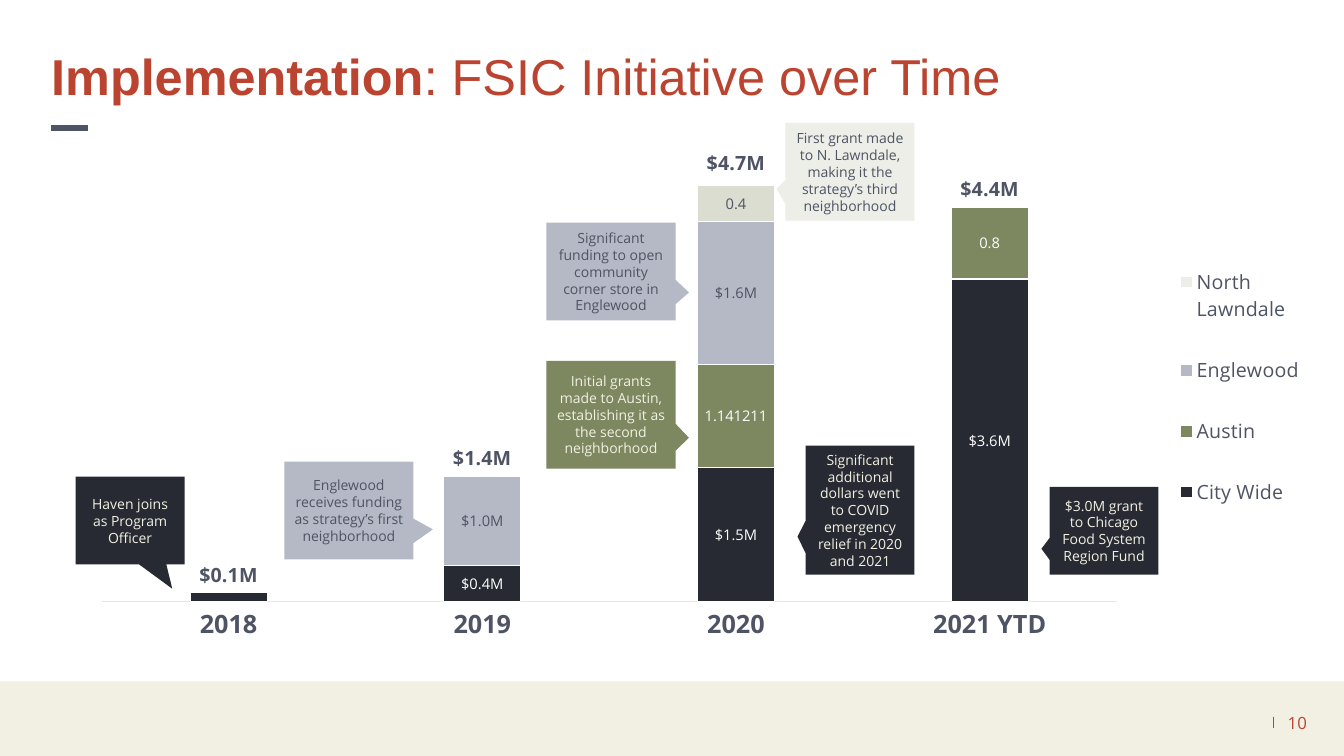
from dataclasses import dataclass
from typing import Optional

from lxml import etree
from pptx import Presentation
from pptx import util as u
from pptx.chart.data import CategoryChartData
from pptx.dml.color import RGBColor
from pptx.enum import chart as ch
from pptx.enum import shapes, text
from pptx.oxml import parse_xml
from pptx.oxml.ns import nsdecls, qn

RED, SLATE, INK, CREAM = "BA4430", "4E5464", "272A32", "F1F0E2"
OLIVE, LAVENDER, PALE, WHITE = "7D8760", "B4B9C5", "ECEEE7", "FFFFFF"
HEADING, BODY = "Arial", "Open Sans"
MONEY = '"$"#,##0.0"M"'


@dataclass
class Callout:
    text: str
    left: float
    top: float
    width: float
    height: float
    tip: tuple[float, float]
    fill: str
    color: str


@dataclass
class Fund:
    name: str
    values: tuple[Optional[float], ...]
    fill: str
    label_color: str
    label_format: str = "General"


CALLOUTS = [
    Callout("Haven joins as Program Officer",
            0.75, 4.73, 1.08, 0.87, (0.388, 0.777), INK, CREAM),
    Callout("Englewood receives funding as strategy’s first neighborhood",
            2.82, 4.58, 1.28, 0.97, (0.651, 0.193), LAVENDER, SLATE),
    Callout("Significant funding to open community corner store in Englewood",
            5.42, 2.21, 1.28, 0.97, (0.604, 0.214), LAVENDER, SLATE),
    Callout("Initial grants made to Austin, establishing it as the second neighborhood",
            5.42, 3.58, 1.28, 1.07, (0.604, 0.214), OLIVE, CREAM),
    Callout("First grant made to N. Lawndale, making it the strategy’s third neighborhood",
            7.79, 1.22, 1.28, 0.97, (-0.569, 0.173), PALE, SLATE),
    Callout("$3.0M grant to Chicago Food System Region Fund",
            10.41, 4.83, 1.08, 0.87, (-0.575, 0.206), INK, CREAM),
    Callout("Significant additional dollars went to COVID emergency relief in 2020 and 2021",
            7.99, 4.42, 1.08, 1.28, (-0.575, 0.206), INK, CREAM),
]
YEARS = ["2018", "2019", "2020", "2021 YTD"]
FUNDS = [
    Fund("City Wide", (0.1, 0.4, 1.5, 3.6), INK, WHITE, MONEY),
    Fund("Austin", (None, None, 1.141211, 0.8), OLIVE, WHITE),
    Fund("Englewood", (None, 1, 1.6, None), LAVENDER, SLATE, MONEY),
    Fund("North Lawndale", (None, None, 0.4, None), PALE, SLATE),
]
TOTALS = (0.1, 1.4, 4.7, 4.4)


def rgb(color: str) -> RGBColor:
    return RGBColor.from_string(color)


def set_font(font, size: float, color: str, name: str = BODY, bold: bool = False) -> None:
    font.size, font.name, font.bold = u.Pt(size), name, bold
    font.color.rgb = rgb(color)


def add_run(p, words: str, size: float, color: str, name: str = BODY, bold: bool = False) -> None:
    r = p.add_run()
    r.text = words
    set_font(r.font, size, color, name, bold)


def add_box(s, kind, left: float, top: float, width: float, height: float, fill: str):
    sp = s.shapes.add_shape(kind, *map(u.Inches, (left, top, width, height)))
    sp.shadow.inherit = False
    sp.fill.solid()
    sp.fill.fore_color.rgb = rgb(fill)
    sp.line.fill.background()
    return sp


def add_text(s, left: float, top: float, width: float, height: float):
    tf = s.shapes.add_textbox(*map(u.Inches, (left, top, width, height))).text_frame
    tf.word_wrap = True
    return tf


def add_line(s, x1: float, y1: float, x2: float, y2: float, color: str, width: float) -> None:
    line = s.shapes.add_connector(shapes.MSO_CONNECTOR.STRAIGHT, *map(u.Inches, (x1, y1, x2, y2)))
    line.line.color.rgb = rgb(color)
    line.line.width = u.Pt(width)
    etree.SubElement(line._element.spPr, qn("a:effectLst"))


def add_callout(s, c: Callout) -> None:
    sp = add_box(s, shapes.MSO_SHAPE.RECTANGULAR_CALLOUT, c.left, c.top, c.width, c.height, c.fill)
    sp.adjustments[0], sp.adjustments[1] = c.tip
    tf = sp.text_frame
    tf.word_wrap = True
    tf.vertical_anchor = text.MSO_ANCHOR.MIDDLE
    p = tf.paragraphs[0]
    p.alignment = text.PP_ALIGN.CENTER
    add_run(p, c.text, 10, c.color)


def set_layout(parent, index: int, x: float, y: float, w: float, h: float, target: str = "") -> None:
    """Place a chart part by hand, in fractions of the chart."""
    for old in parent.findall(qn("c:layout")):
        parent.remove(old)
    parent.insert(index, parse_xml(
        f'<c:layout {nsdecls("c")}><c:manualLayout>{target}'
        '<c:xMode val="edge"/><c:yMode val="edge"/>'
        f'<c:x val="{x}"/><c:y val="{y}"/><c:w val="{w}"/><c:h val="{h}"/>'
        '</c:manualLayout></c:layout>'))


def move_totals_to_line(area) -> None:
    """Turn the last column series into a line on hidden second axes."""
    bars = area.find(qn("c:barChart"))
    ser = bars.findall(qn("c:ser"))[-1]
    for flag in ser.findall(qn("c:invertIfNegative")):
        ser.remove(flag)
    line = parse_xml(
        f'<c:lineChart {nsdecls("c")}><c:grouping val="standard"/><c:varyColors val="0"/>'
        '<c:marker val="1"/><c:axId val="5001"/><c:axId val="5002"/></c:lineChart>')
    line.insert(2, ser)
    bars.addnext(line)
    last = area.find(qn("c:valAx"))
    for tag, own, other, side, crosses, scale in (
            ("catAx", 5001, 5002, "b", "autoZero", ""),
            ("valAx", 5002, 5001, "r", "max", '<c:max val="5"/><c:min val="0"/>')):
        axis = parse_xml(
            f'<c:{tag} {nsdecls("c")}><c:axId val="{own}"/>'
            f'<c:scaling><c:orientation val="minMax"/>{scale}</c:scaling><c:delete val="1"/>'
            f'<c:axPos val="{side}"/><c:crossAx val="{other}"/>'
            f'<c:crosses val="{crosses}"/></c:{tag}>')
        last.addnext(axis)
        last = axis


def style_labels(ser, size: float, color: str, number_format: str, bold: bool = False):
    labels = ser.data_labels
    labels.show_value = True
    labels.number_format, labels.number_format_is_linked = number_format, False
    set_font(labels.font, size, color, bold=bold)
    return labels


def paint_column(fmt, fill: str) -> None:
    fmt.fill.solid()
    fmt.fill.fore_color.rgb = rgb(fill)
    fmt.line.color.rgb = rgb(WHITE)
    fmt.line.width = u.Pt(0.75)


def add_funding_chart(s) -> None:
    data = CategoryChartData()
    data.categories = YEARS
    for fund in FUNDS:
        data.add_series(fund.name, fund.values)
    data.add_series("Series 5", TOTALS)
    chart = s.shapes.add_chart(ch.XL_CHART_TYPE.COLUMN_STACKED,
                               *map(u.Inches, (0.75, 1.34, 12.35, 5.21)), data).chart
    chart.has_title = False
    set_font(chart.font, 12, SLATE)

    years, money = chart.category_axis, chart.value_axis
    years.major_tick_mark = years.minor_tick_mark = ch.XL_TICK_MARK.NONE
    years.format.line.color.rgb = rgb("E3E5E9")
    years.format.line.width = u.Pt(0.75)
    set_font(years.tick_labels.font, 18, SLATE, bold=True)
    money.minimum_scale, money.maximum_scale = 0, 5
    money.has_major_gridlines = money.visible = False
    money.tick_labels.number_format = MONEY
    money.tick_labels.number_format_is_linked = False

    area = chart._chartSpace.chart.plotArea
    move_totals_to_line(area)
    set_layout(area, 0, 0.021, 0.035, 0.815, 0.854, '<c:layoutTarget val="inner"/>')

    columns, line = chart.plots
    columns.gap_width, columns.overlap = 230, 100
    columns.vary_by_categories = False
    for fund, ser in zip(FUNDS, columns.series):
        paint_column(ser.format, fund.fill)
        style_labels(ser, 10.5, fund.label_color, fund.label_format)
    paint_column(columns.series[3].points[2].format, "DADDD0")
    columns.series[0].data_labels._element.insert(0, parse_xml(
        f'<c:dLbl {nsdecls("c")}><c:idx val="0"/><c:delete val="1"/></c:dLbl>'))

    totals = line.series[0]
    totals.format.line.fill.background()
    totals.marker.style = ch.XL_MARKER_STYLE.NONE
    totals.smooth = False
    style_labels(totals, 14, SLATE, MONEY, bold=True).position = ch.XL_LABEL_POSITION.ABOVE

    chart.has_legend = True
    legend = chart.legend
    legend.position = ch.XL_LEGEND_POSITION.RIGHT
    legend.include_in_layout = False
    set_font(legend.font, 14, SLATE)
    legend._element.insert(1, parse_xml(
        f'<c:legendEntry {nsdecls("c")}><c:idx val="4"/><c:delete val="1"/></c:legendEntry>'))
    set_layout(legend._element, 2, 0.87, 0.19, 0.13, 0.58)


def main() -> None:
    prs = Presentation()
    prs.slide_width, prs.slide_height = u.Inches(13.33), u.Inches(7.5)
    s = prs.slides.add_slide(prs.slide_layouts[6])
    add_box(s, shapes.MSO_SHAPE.RECTANGLE, 0, 6.76, 13.33, 0.74, CREAM)
    add_line(s, 12.63, 7.11, 12.63, 7.22, RED, 1)
    add_line(s, 0.51, 1.27, 0.87, 1.27, SLATE, 3.75)

    tf = add_text(s, 12.37, 6.97, 0.69, 0.4)
    tf.vertical_anchor = text.MSO_ANCHOR.MIDDLE
    tf.paragraphs[0].alignment = text.PP_ALIGN.RIGHT
    add_run(tf.paragraphs[0], "10", 12, RED)

    p = add_text(s, 0.41, 0.47, 11.85, 0.87).paragraphs[0]
    p.line_spacing = 0.9
    add_run(p, "Implementation", 36, RED, HEADING, bold=True)
    add_run(p, ": FSIC Initiative over Time", 36, RED, HEADING)

    add_funding_chart(s)
    for callout in CALLOUTS:
        add_callout(s, callout)
    prs.save("out.pptx")


if __name__ == "__main__":
    main()
